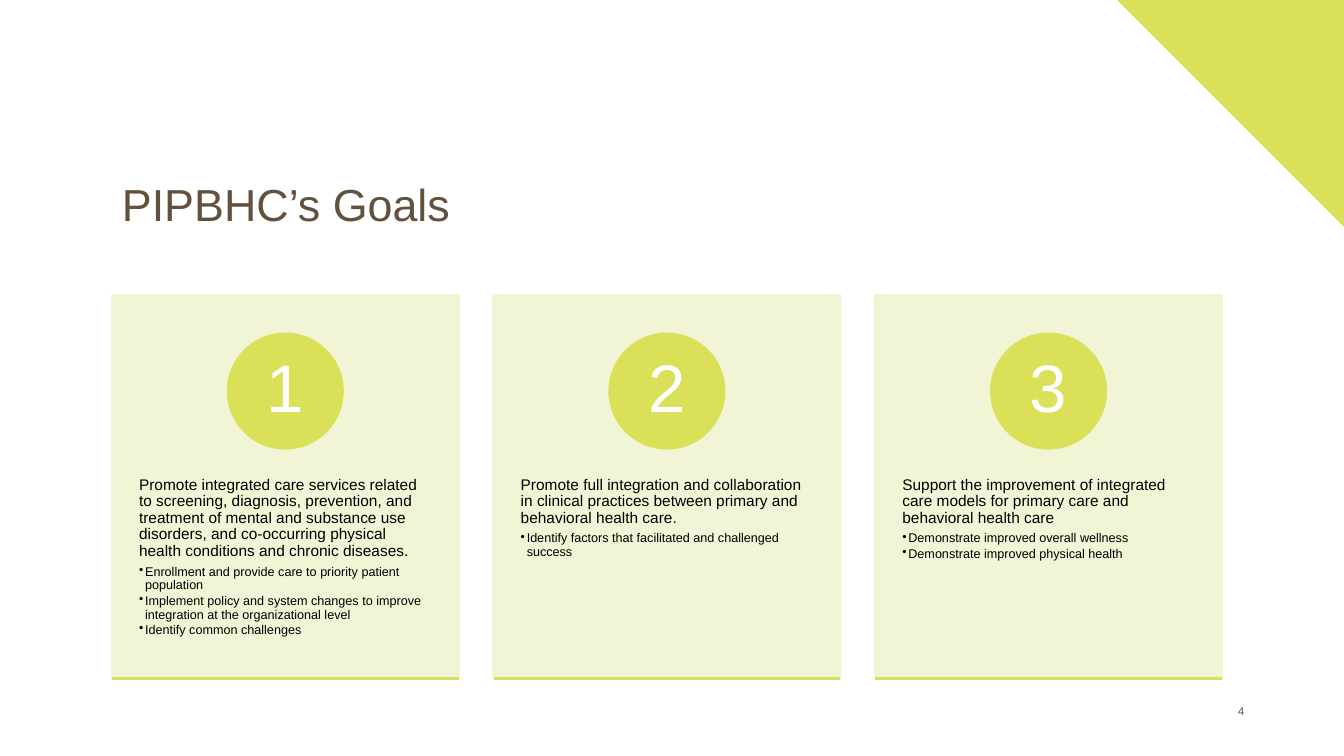
from dataclasses import dataclass

from lxml import etree
from pptx import Presentation
from pptx.dml.color import RGBColor
from pptx.enum.shapes import MSO_CONNECTOR, MSO_SHAPE
from pptx.enum.text import MSO_ANCHOR, PP_ALIGN
from pptx.oxml.ns import qn
from pptx.shapes.autoshape import Shape
from pptx.slide import Slide
from pptx.text.text import TextFrame
from pptx.util import Inches, Pt

RECT, OVAL = MSO_SHAPE.RECTANGLE, MSO_SHAPE.OVAL
CORNER = MSO_SHAPE.RIGHT_TRIANGLE
STRAIGHT = MSO_CONNECTOR.STRAIGHT
MIDDLE, TOP = MSO_ANCHOR.MIDDLE, MSO_ANCHOR.TOP
LEFT, CENTER, RIGHT = PP_ALIGN.LEFT, PP_ALIGN.CENTER, PP_ALIGN.RIGHT

FONT = "Arial"
LIME, CREAM, BROWN = "DAE159", "F1F4D1", "63513D"
BLACK, WHITE = "000000", "FFFFFF"

FIRST, LAST = 1.11, 8.68
CARD_TOP, CARD_W, CARD_H = 2.93, 3.44, 3.8
DISC = 1.14


@dataclass
class Goal:
    text: str
    steps: list[str]


GOALS = [
    Goal("Promote integrated care services related to screening, diagnosis, "
         "prevention, and treatment of mental and substance use disorders, "
         "and co-occurring physical health conditions and chronic diseases.",
         ["Enrollment and provide care to priority patient population",
          "Implement policy and system changes to improve integration "
          "at the organizational level",
          "Identify common challenges"]),
    Goal("Promote full integration and collaboration in clinical practices "
         "between primary and behavioral health care.",
         ["Identify factors that facilitated and challenged success"]),
    Goal("Support the improvement of integrated care models for primary care "
         "and behavioral health care",
         ["Demonstrate improved overall wellness",
          "Demonstrate improved physical health"]),
]


def color(code: str) -> RGBColor:
    return RGBColor.from_string(code)


def add_shape(slide: Slide, kind: int, x: float, y: float, w: float, h: float,
              fill: str) -> Shape:
    shape = slide.shapes.add_shape(kind, Inches(x), Inches(y), Inches(w), Inches(h))
    shape.shadow.inherit = False
    shape.fill.solid()
    shape.fill.fore_color.rgb = color(fill)
    shape.line.color.rgb = color(fill)
    shape.line.width = Pt(1.5)
    return shape


def fade(shape: Shape, percent: int) -> None:
    """Set the opacity of the fill and the line."""
    for tone in shape._element.spPr.iter(qn("a:srgbClr")):
        etree.SubElement(tone, qn("a:alpha"), val=str(percent * 1000))


def set_frame(frame: TextFrame, anchor: int, side: float = 0.1,
              edge: float = 0.05) -> None:
    frame.word_wrap = True
    frame.vertical_anchor = anchor
    frame.margin_left = frame.margin_right = Inches(side)
    frame.margin_top = frame.margin_bottom = Inches(edge)


def add_text(frame: TextFrame, text: str, size: float, tone: str,
             align: int = LEFT, after: float = 0, bullet: bool = False) -> None:
    """Fill the first paragraph if it is free, else add one."""
    para = frame.paragraphs[0] if not frame.text else frame.add_paragraph()
    para.text = text
    para.alignment = align
    para.line_spacing = 0.9
    para.space_after = Pt(after)
    if bullet:
        para.level = 1
        props = para._p.get_or_add_pPr()
        props.set("marL", str(Inches(0.06)))
        props.set("indent", str(-Inches(0.06)))
        etree.SubElement(props, qn("a:buChar"), char="•")
    para.font.name = FONT
    para.font.size = Pt(size)
    para.font.color.rgb = color(tone)


def add_box(slide: Slide, x: float, y: float, w: float, h: float) -> TextFrame:
    box = slide.shapes.add_textbox(Inches(x), Inches(y), Inches(w), Inches(h))
    return box.text_frame


def add_rule(slide: Slide, x: float, y: float, w: float) -> None:
    rule = slide.shapes.add_connector(
        STRAIGHT, Inches(x), Inches(y), Inches(x + w), Inches(y))
    rule.line.color.rgb = color(LIME)
    rule.line.width = Pt(2)
    etree.SubElement(rule._element.spPr, qn("a:effectLst"))


def add_card(slide: Slide, x: float, number: int, goal: Goal) -> None:
    card = add_shape(slide, RECT, x, CARD_TOP, CARD_W, CARD_H, CREAM)
    fade(card, 90)

    body = add_box(slide, x, 4.37, CARD_W, 2.28)
    set_frame(body, TOP, 0.27, 0.36)
    add_text(body, goal.text, 11, BLACK, after=3.85)
    for step in goal.steps:
        add_text(body, step, 9, BLACK, after=1.35, bullet=True)

    disc = add_shape(slide, OVAL, x + (CARD_W - DISC) / 2, 3.31, DISC, DISC, LIME)
    set_frame(disc.text_frame, MIDDLE, 0.09, 0.01)
    add_text(disc.text_frame, str(number), 48, WHITE, CENTER)
    add_rule(slide, x, CARD_TOP + CARD_H, CARD_W)


def add_title(slide: Slide, text: str) -> None:
    title = slide.shapes.title
    title.left, title.top = Inches(FIRST), Inches(1.63)
    title.width, title.height = Inches(11), Inches(0.85)
    set_frame(title.text_frame, MIDDLE)
    add_text(title.text_frame, text, 32, BROWN)


def main() -> None:
    deck = Presentation()
    deck.slide_width, deck.slide_height = Inches(13.33), Inches(7.5)
    slide = deck.slides.add_slide(deck.slide_layouts[5])

    corner = add_shape(slide, CORNER, 11.08, 0, 2.25, 2.25, LIME)
    corner.rotation = 180
    corner.line.fill.background()
    add_title(slide, "PIPBHC’s Goals")

    page = add_box(slide, 9.44, 6.95, 3, 0.23)
    set_frame(page, MIDDLE)
    add_text(page, "4", 8, BROWN, RIGHT)

    pitch = (LAST - FIRST) / (len(GOALS) - 1)
    for i, goal in enumerate(GOALS):
        add_card(slide, FIRST + i * pitch, i + 1, goal)
    deck.save("out.pptx")


if __name__ == "__main__":
    main()
